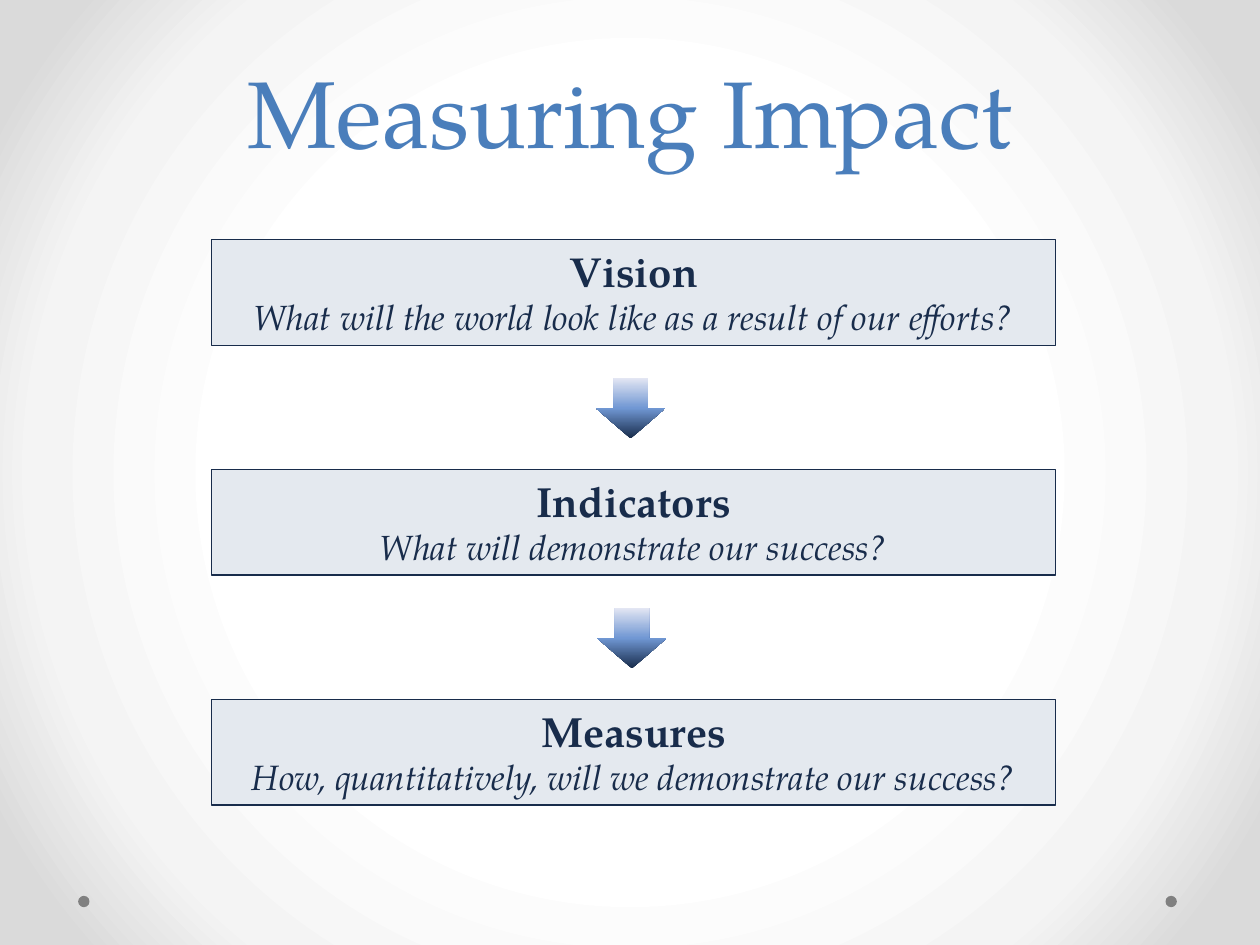
from lxml import etree
from pptx import Presentation
from pptx.dml.color import RGBColor
from pptx.enum.shapes import MSO_SHAPE
from pptx.enum.text import MSO_ANCHOR, MSO_AUTO_SIZE, PP_ALIGN
from pptx.oxml.ns import qn
from pptx.util import Inches, Pt

FONT = "TeX Gyre Pagella"
COLORS = {
    "title": "4A7EBB",
    "ink": "182C4B",
    "panel": "E4E9EF",
    "dot": "808080",
    "arrow_mid": "7097D3",
    "arrow_light": "E3E6F3",
    "white": "FFFFFF",
    "haze": "F4F4F4",
    "edge": "DADADA",
}


def color(name):
    return RGBColor.from_string(COLORS[name])


def add_text(paragraph, text, size=20, ink="ink", bold=False, italic=False):
    paragraph.alignment = PP_ALIGN.CENTER
    run = paragraph.add_run()
    run.text = text
    font = run.font
    font.name, font.size, font.bold, font.italic = FONT, Pt(size), bold, italic
    font.color.rgb = color(ink)


def set_gradient(fill, element, stops, angle=None):
    """Linear gradient at the given angle, or circular from the centre."""
    fill.gradient()
    gradient = element.find(".//" + qn("a:gradFill"))
    for child in list(gradient):
        gradient.remove(child)
    stop_list = etree.SubElement(gradient, qn("a:gsLst"))
    for percent, name in stops:
        stop = etree.SubElement(stop_list, qn("a:gs"), pos=str(percent * 1000))
        etree.SubElement(stop, qn("a:srgbClr"), val=COLORS[name])
    if angle is None:
        circle = etree.SubElement(gradient, qn("a:path"), path="circle")
        etree.SubElement(circle, qn("a:fillToRect"),
                         {side: "50000" for side in "ltrb"})
    else:
        etree.SubElement(gradient, qn("a:lin"), ang=str(angle * 60000), scaled="0")


class SlideBuilder:
    def __init__(self, slide):
        self.slide = slide

    def background(self, stops):
        set_gradient(self.slide.background.fill, self.slide.element, stops)

    def shape(self, kind, left, top, width, height, fill=None):
        shape = self.slide.shapes.add_shape(
            kind, Inches(left), Inches(top), Inches(width), Inches(height))
        shape.shadow.inherit = False
        shape.line.fill.background()
        if fill:
            shape.fill.solid()
            shape.fill.fore_color.rgb = color(fill)
        return shape

    def title(self, text, left, top, width, height):
        frame = self.slide.shapes.add_textbox(
            Inches(left), Inches(top), Inches(width), Inches(height)).text_frame
        frame.word_wrap = True
        frame.vertical_anchor = MSO_ANCHOR.MIDDLE
        add_text(frame.paragraphs[0], text, size=54, ink="title")

    def dot(self, left, top):
        self.shape(MSO_SHAPE.OVAL, left, top, 0.09, 0.09, fill="dot")

    def stage(self, heading, question, top):
        panel = self.shape(MSO_SHAPE.RECTANGLE, 1.68, top, 6.7, 0.84, fill="panel")
        panel.line.color.rgb = color("ink")
        panel.line.width = Pt(0.75)
        frame = panel.text_frame
        frame.word_wrap = True
        frame.auto_size = MSO_AUTO_SIZE.SHAPE_TO_FIT_TEXT
        frame.vertical_anchor = MSO_ANCHOR.TOP
        add_text(frame.paragraphs[0], heading, size=24, bold=True)
        add_text(frame.add_paragraph(), question, italic=True)

    def arrow(self, left, top):
        arrow = self.shape(MSO_SHAPE.DOWN_ARROW, left, top, 0.55, 0.48)
        set_gradient(arrow.fill, arrow.element,
                     [(0, "ink"), (50, "arrow_mid"), (100, "arrow_light")], angle=270)


def main():
    deck = Presentation()
    deck.slide_width, deck.slide_height = Inches(10), Inches(7.5)
    builder = SlideBuilder(deck.slides.add_slide(deck.slide_layouts[6]))

    # Backdrop and corner dots
    builder.background([(50, "white"), (76, "haze"), (92, "edge")])
    for left in (9.25, 0.62):
        builder.dot(left, 7.11)

    builder.title("Measuring Impact", 0.5, 0, 9, 1.75)

    # Three stages at an equal pitch
    first_top, pitch = 1.9, 1.825
    stages = [
        ("Vision", "What will the world look like as a result of our efforts?"),
        ("Indicators", "What will demonstrate our success?"),
        ("Measures", "How, quantitatively, will we demonstrate our success?"),
    ]
    for row, (heading, question) in enumerate(stages):
        builder.stage(heading, question, first_top + row * pitch)

    # Arrows in the gaps between stages
    for row, left in enumerate((4.73, 4.74)):
        builder.arrow(left, first_top + 1.1 + row * pitch)

    deck.save("out.pptx")


if __name__ == "__main__":
    main()
